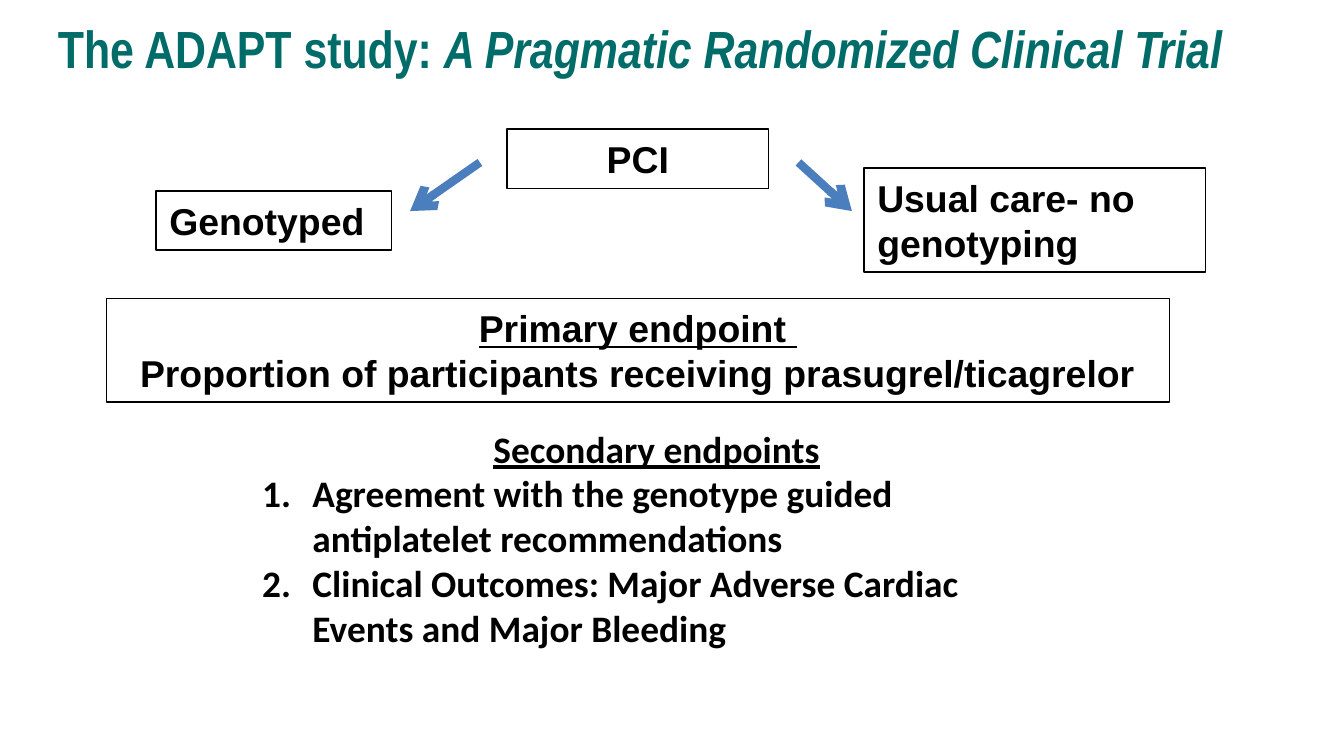
from lxml import etree
from pptx import Presentation
from pptx.dml.color import RGBColor
from pptx.enum.shapes import MSO_CONNECTOR, MSO_SHAPE
from pptx.enum.text import MSO_ANCHOR, MSO_AUTO_SIZE, PP_ALIGN
from pptx.oxml.ns import qn
from pptx.util import Cm, Pt

LEFT, CENTER = PP_ALIGN.LEFT, PP_ALIGN.CENTER
TOP, MIDDLE = MSO_ANCHOR.TOP, MSO_ANCHOR.MIDDLE
RECTANGLE = MSO_SHAPE.RECTANGLE
STRAIGHT = MSO_CONNECTOR.STRAIGHT
NO_AUTOFIT = MSO_AUTO_SIZE.NONE

BLACK = RGBColor(0x00, 0x00, 0x00)
TEAL = RGBColor(0x00, 0x6C, 0x69)
BLUE = RGBColor(0x4B, 0x7E, 0xBC)


class TrialSlide:
    """Style of the study slide and the slide being filled."""

    title_font, box_font, list_font = "Arial Narrow", "Arial", "Calibri"
    title_size, text_size = Pt(28), Pt(20)
    number_indent = Cm(0.95)

    def __init__(self, prs):
        self.slide = prs.slides.add_slide(prs.slide_layouts[1])

    def place(self, sp, left, top, width, height):
        sp.left, sp.top = Cm(left), Cm(top)
        sp.width, sp.height = Cm(width), Cm(height)

    def frame(self, sp, anchor):
        tf = sp.text_frame
        tf.word_wrap = True
        tf.auto_size = NO_AUTOFIT
        tf.vertical_anchor = anchor
        return tf

    def paragraph(self, tf, index, align):
        p = tf.add_paragraph() if index else tf.paragraphs[0]
        p.alignment = align
        p.space_before = Pt(0)
        return p

    def run(self, p, text, font, size=text_size, color=BLACK,
            underline=False, italic=False):
        r = p.add_run()
        r.text = text
        r.font.name, r.font.size, r.font.bold = font, size, True
        r.font.underline, r.font.italic = underline, italic
        r.font.color.rgb = color

    def title(self, area, plain, italic):
        sp = self.slide.shapes.title
        self.place(sp, *area)
        p = self.paragraph(self.frame(sp, TOP), 0, LEFT)
        for text, slanted in ((plain, False), (italic, True)):
            self.run(p, text, self.title_font, self.title_size, TEAL,
                     italic=slanted)

    def numbered_list(self, area, heading, items):
        sp = self.slide.placeholders[1]
        self.place(sp, *area)
        tf = self.frame(sp, TOP)
        for i, text in enumerate([heading, *items]):
            p = self.paragraph(tf, i, CENTER if i == 0 else LEFT)
            pPr = p._p.get_or_add_pPr()
            indent = self.number_indent if i else 0
            pPr.set("marL", str(indent))
            pPr.set("indent", str(-indent))
            if i:
                etree.SubElement(pPr, qn("a:buFont"), typeface="+mj-lt")
                etree.SubElement(pPr, qn("a:buAutoNum"), type="arabicPeriod")
            else:
                etree.SubElement(pPr, qn("a:buNone"))
            self.run(p, text, self.list_font, underline=i == 0)

    def box(self, area, lines, align=CENTER, underline_first=False):
        sp = self.slide.shapes.add_shape(RECTANGLE, *map(Cm, area))
        sp.shadow.inherit = False
        sp.fill.background()
        sp.line.color.rgb = BLACK
        sp.line.width = Pt(0.75)
        tf = self.frame(sp, MIDDLE)
        for i, text in enumerate(lines):
            p = self.paragraph(tf, i, align)
            self.run(p, text, self.box_font,
                     underline=underline_first and i == 0)

    def arrow(self, start, end):
        line = self.slide.shapes.add_connector(
            STRAIGHT, *map(Cm, (*start, *end)))
        line.line.color.rgb = BLUE
        line.line.width = Pt(4.5)
        spPr = line.element.spPr
        etree.SubElement(spPr.find(qn("a:ln")), qn("a:tailEnd"), type="arrow")
        etree.SubElement(spPr, qn("a:effectLst"))


def main():
    prs = Presentation()
    prs.slide_width, prs.slide_height = Cm(25.4), Cm(14.29)
    s = TrialSlide(prs)

    s.title((0.84, 0.18, 24.08, 1.17), "The ADAPT study: ",
            "A Pragmatic Randomized Clinical Trial")
    s.numbered_list((4.7, 7.92, 15.42, 4.52), "Secondary endpoints", [
        "Agreement with the genotype guided antiplatelet recommendations",
        "Clinical Outcomes: Major Adverse Cardiac Events and Major Bleeding",
    ])

    s.box((2.01, 5.64, 20.09, 1.96), [
        "Primary endpoint ",
        "Proportion of participants receiving prasugrel/ticagrelor",
    ], underline_first=True)
    s.box((9.58, 2.44, 4.95, 1.12), ["PCI"])
    s.box((2.95, 3.61, 4.45, 1.12), ["Genotyped"], LEFT)
    s.box((16.33, 3.18, 6.45, 1.96), ["Usual care- no genotyping"], LEFT)

    arrow_top, arrow_bottom = 3.07, 3.99
    for x_start, x_end in ((9.07, 7.75), (15.09, 16.1)):
        s.arrow((x_start, arrow_top), (x_end, arrow_bottom))

    prs.save("out.pptx")


if __name__ == "__main__":
    main()
